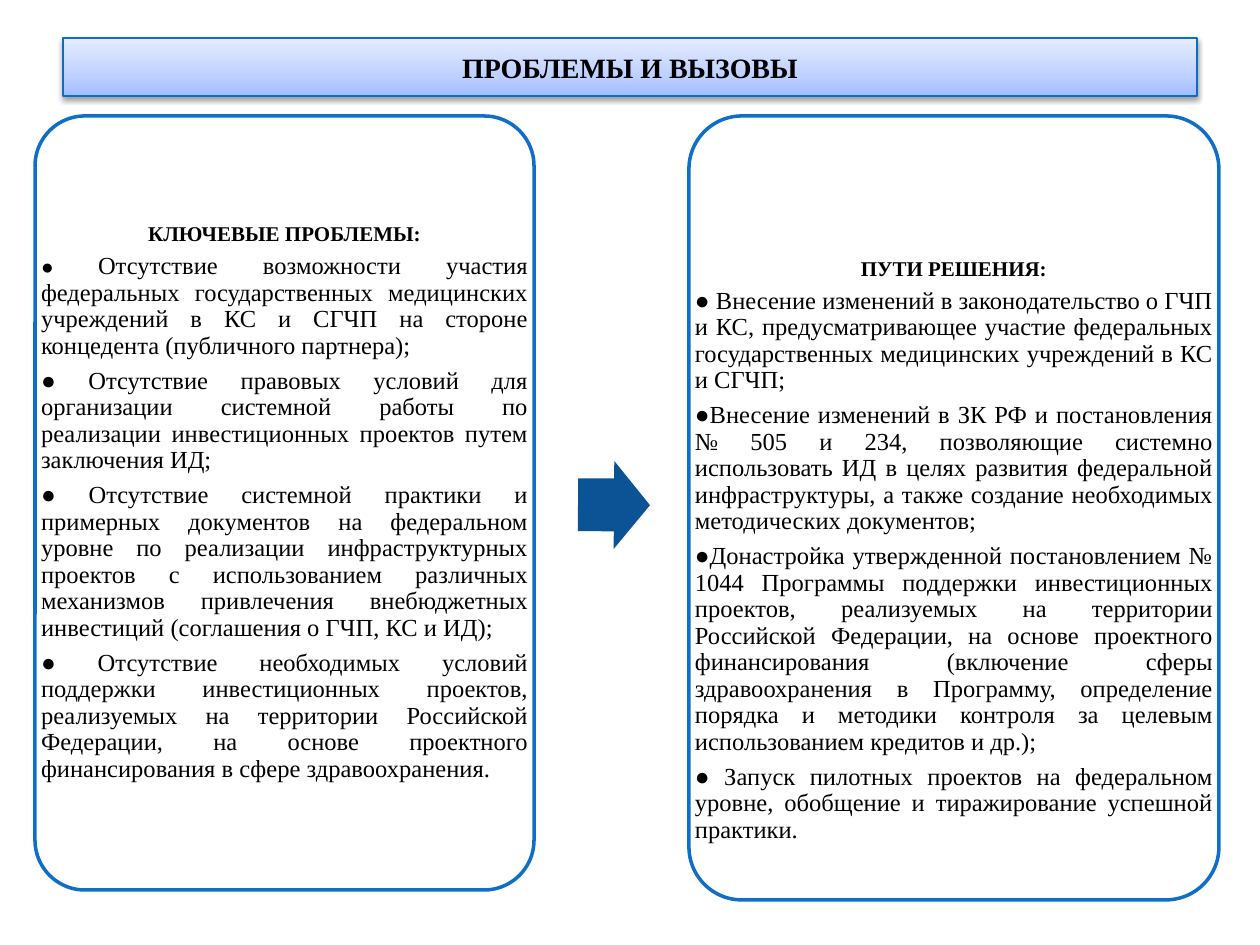
from copy import deepcopy

from pptx import Presentation
from pptx.dml.color import RGBColor
from pptx.enum.shapes import MSO_SHAPE
from pptx.enum.text import MSO_ANCHOR, PP_ALIGN
from pptx.oxml import parse_xml
from pptx.oxml.ns import nsdecls, qn
from pptx.util import Emu, Pt

RECTANGLE = MSO_SHAPE.RECTANGLE
ROUNDED = MSO_SHAPE.ROUNDED_RECTANGLE
RIGHT_ARROW = MSO_SHAPE.RIGHT_ARROW
MIDDLE = MSO_ANCHOR.MIDDLE
CENTER, JUSTIFY = PP_ALIGN.CENTER, PP_ALIGN.JUSTIFY

EMU_PER_PX = 914400 // 126
FONT = "Times New Roman"
COLORS = {
    "text": "000000",
    "panel": "FFFFFF",
    "panel_line": "0F6FC6",
    "title_line": "0A6DC6",
    "arrow": "0B5394",
}
TITLE_GRADIENT = [(0, "A3BDFF"), (0.35, "BED0FF"), (1, "E6EDFF")]

PROBLEMS = [
    "● Отсутствие возможности участия федеральных государственных медицинских "
    "учреждений в КС и СГЧП на стороне концедента (публичного партнера);",
    "● Отсутствие правовых условий для организации системной работы по реализации "
    "инвестиционных проектов путем заключения ИД;",
    "● Отсутствие системной практики и примерных документов на федеральном уровне "
    "по реализации инфраструктурных проектов с использованием различных механизмов "
    "привлечения внебюджетных инвестиций (соглашения о ГЧП, КС и ИД);",
    "● Отсутствие необходимых условий поддержки инвестиционных проектов, реализуемых "
    "на территории Российской Федерации, на основе проектного финансирования "
    "в сфере здравоохранения.",
]
SOLUTIONS = [
    "● Внесение изменений в законодательство о ГЧП и КС, предусматривающее участие "
    "федеральных государственных медицинских учреждений в КС и СГЧП;",
    "●Внесение изменений в ЗК РФ и постановления № 505 и 234, позволяющие системно "
    "использовать ИД в целях развития федеральной инфраструктуры, а также создание "
    "необходимых методических документов;",
    "●Донастройка утвержденной постановлением № 1044 Программы поддержки "
    "инвестиционных проектов, реализуемых на территории Российской Федерации, "
    "на основе проектного финансирования (включение сферы здравоохранения в Программу, "
    "определение порядка и методики контроля за целевым использованием кредитов и др.);",
    "● Запуск пилотных проектов на федеральном уровне, обобщение и тиражирование "
    "успешной практики.",
]


def px(value):
    return Emu(value * EMU_PER_PX)


class SlideBuilder:
    """Holds the style and the current slide."""

    def __init__(self, slide):
        self.slide = slide

    def shape(self, kind, box, fill=None, line=None, width=1):
        shape = self.slide.shapes.add_shape(kind, *map(px, box))
        shape.shadow.inherit = False
        if fill:
            shape.fill.solid()
            shape.fill.fore_color.rgb = RGBColor.from_string(COLORS[fill])
        if line:
            shape.line.color.rgb = RGBColor.from_string(COLORS[line])
            shape.line.width = Pt(width)
        else:
            shape.line.fill.background()
        return shape

    def set_text(self, paragraph, text, size, bold=False, align=CENTER):
        paragraph.text = text
        paragraph.alignment = align
        font = paragraph.runs[0].font
        font.name, font.size, font.bold = FONT, Pt(size), bold
        font.color.rgb = RGBColor.from_string(COLORS["text"])

    def title(self, box, text):
        shape = self.shape(RECTANGLE, box, line="title_line", width=0.75)
        shape.fill.gradient()
        shape.fill.gradient_angle = 90
        stop_list = shape._element.spPr.find(".//" + qn("a:gsLst"))
        stop_list.insert(1, deepcopy(stop_list[0]))
        for stop, (position, color) in zip(shape.fill.gradient_stops, TITLE_GRADIENT):
            stop.position = position
            stop.color.rgb = RGBColor.from_string(color)
        # Soft shadow below the bar
        shape._element.spPr.find(qn("a:effectLst")).append(parse_xml(
            f'<a:outerShdw {nsdecls("a")} blurRad="{Pt(3.1)}" dist="{Pt(1.6)}" '
            'dir="5400000" rotWithShape="0"><a:srgbClr val="000000">'
            '<a:alpha val="38000"/></a:srgbClr></a:outerShdw>'))
        shape.text_frame.vertical_anchor = MIDDLE
        self.set_text(shape.text_frame.paragraphs[0], text, 16, bold=True)

    def panel(self, box, heading, items, top_inset=6):
        shape = self.shape(ROUNDED, box, "panel", "panel_line", 2)
        shape.adjustments[0] = 0.1
        frame = self.slide.shapes.add_textbox(*map(px, box)).text_frame
        frame.word_wrap = True
        frame.vertical_anchor = MIDDLE
        frame.margin_left = frame.margin_right = frame.margin_bottom = px(6)
        frame.margin_top = px(top_inset)
        self.set_text(frame.paragraphs[0], heading, 12, bold=True)
        for item in items:
            self.set_text(frame.add_paragraph(), item, 14, align=JUSTIFY)
        for paragraph in frame.paragraphs:
            paragraph.line_spacing = 0.9
            paragraph.space_after = Pt(0.35 * paragraph.runs[0].font.size.pt)
        return frame

    def arrow(self, box):
        shape = self.shape(RIGHT_ARROW, box, "arrow")
        shape.adjustments[0], shape.adjustments[1] = 0.6, 0.5
        shape.rotation = 0.4


def main():
    presentation = Presentation()
    presentation.slide_width, presentation.slide_height = px(1260), px(945)
    builder = SlideBuilder(presentation.slides.add_slide(presentation.slide_layouts[6]))

    # Title bar
    builder.title((63, 38, 1134, 58), "ПРОБЛЕМЫ И ВЫЗОВЫ")

    # Problems, with a smaller first bullet
    problems = builder.panel((35, 116, 499, 774), "КЛЮЧЕВЫЕ ПРОБЛЕМЫ:", PROBLEMS)
    first_item = problems.paragraphs[1]
    bullet, body = first_item.runs[0], first_item.add_run()
    body._r.insert(0, deepcopy(bullet._r.rPr))
    bullet.text, body.text = "● ", PROBLEMS[0].removeprefix("● ")
    bullet.font.size = Pt(12)

    # Arrow to the solutions
    builder.arrow((578, 461, 72, 88))
    builder.panel((689, 116, 530, 784), "ПУТИ РЕШЕНИЯ:", SOLUTIONS, top_inset=92)

    presentation.save("out.pptx")


if __name__ == "__main__":
    main()
